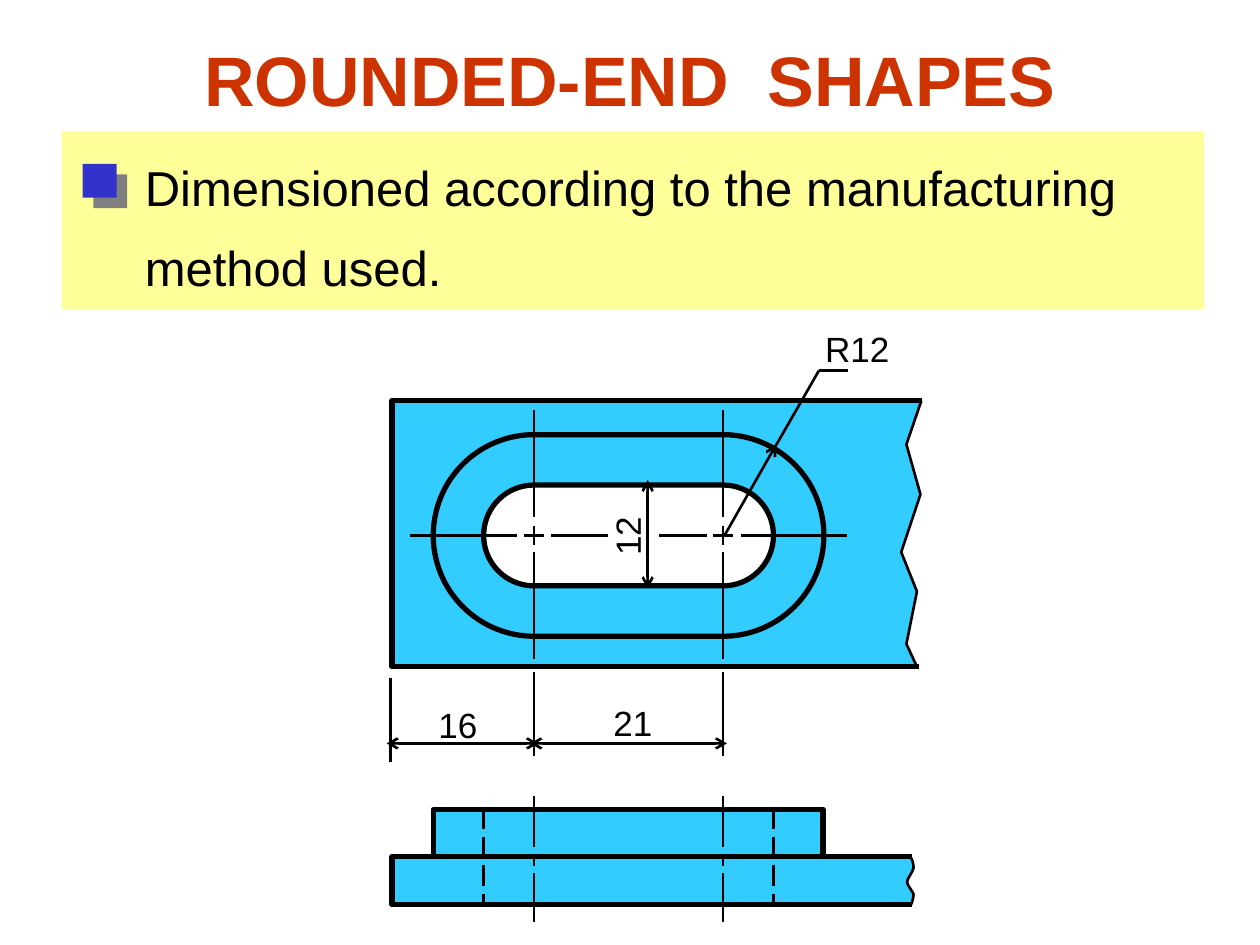
from dataclasses import dataclass
from typing import Optional

import lxml.etree
import pptx
import pptx.dml.color
import pptx.enum.dml
import pptx.enum.shapes
import pptx.enum.text
import pptx.oxml.ns
import pptx.util

Pt = pptx.util.Pt
qn = pptx.oxml.ns.qn
SHAPE = pptx.enum.shapes.MSO_SHAPE
BLACK, METAL, WHITE = "000000", "33CCFF", "FFFFFF"
THICK, THIN = 3, 1.5
Point = tuple[float, float]


@dataclass
class Stroke:
    start: Point
    end: Point
    head: bool = False
    tail: bool = False
    dashed: bool = False


@dataclass
class Label:
    text: str
    left: float
    top: float
    width: float = 36.7
    rotation: float = 0


@dataclass
class Centre:
    x: float
    outward: int    # direction of the nearer end of the slot
    reach: float    # end of the centre line on the inner side


def color(hex_code: str) -> pptx.dml.color.RGBColor:
    return pptx.dml.color.RGBColor.from_string(hex_code)


def paint(shape, fill: Optional[str], weight: float = 0) -> None:
    shape.shadow.inherit = False
    if fill:
        shape.fill.solid()
        shape.fill.fore_color.rgb = color(fill)
    else:
        shape.fill.background()
    if weight:
        shape.line.color.rgb = color(BLACK)
        shape.line.width = Pt(weight)
    else:
        shape.line.fill.background()


def add_block(kind, left: float, top: float, width: float, height: float,
              fill: str, weight: float = 0):
    block = shapes.add_shape(kind, Pt(left), Pt(top), Pt(width), Pt(height))
    paint(block, fill, weight)
    return block


def add_outline(points: list[Point], fill: Optional[str], weight: float = 0) -> None:
    corners = [(Pt(x), Pt(y)) for x, y in points]
    builder = shapes.build_freeform(*corners[0])
    builder.add_line_segments(corners[1:], close=bool(fill))
    paint(builder.convert_to_shape(), fill, weight)


def add_stroke(stroke: Stroke) -> None:
    line = shapes.add_connector(pptx.enum.shapes.MSO_CONNECTOR.STRAIGHT,
                                *map(Pt, stroke.start + stroke.end))
    line.line.color.rgb = color(BLACK)
    line.line.width = Pt(THIN)
    if stroke.dashed:
        line.line.dash_style = pptx.enum.dml.MSO_LINE.LONG_DASH
    properties = line.element.spPr
    for tag, wanted in (("a:headEnd", stroke.head), ("a:tailEnd", stroke.tail)):
        if wanted:
            lxml.etree.SubElement(properties.find(qn("a:ln")), qn(tag), type="arrow")
    lxml.etree.SubElement(properties, qn("a:effectLst"))


def format_text(frame, size: float, hex_code: str, bold: bool = False) -> None:
    for paragraph in frame.paragraphs:
        for run in paragraph.runs:
            run.font.name = "Arial"
            run.font.size = Pt(size)
            run.font.bold = bold
            run.font.color.rgb = color(hex_code)


def add_label(label: Label) -> None:
    box = shapes.add_textbox(Pt(label.left), Pt(label.top), Pt(label.width), Pt(31))
    box.rotation = label.rotation
    box.text_frame.text = label.text
    format_text(box.text_frame, 20, BLACK)


def place(holder, left: float, top: float, width: float, height: float) -> None:
    holder.left, holder.top = Pt(left), Pt(top)
    holder.width, holder.height = Pt(width), Pt(height)
    holder.text_frame.auto_size = pptx.enum.text.MSO_AUTO_SIZE.NONE


def sample_curve(controls: list[Point], steps: int = 8) -> list[Point]:
    """Points along joined cubic Bezier curves."""
    points = [controls[0]]
    for first in range(0, len(controls) - 1, 3):
        a, b, c, d = controls[first:first + 4]
        for step in range(1, steps + 1):
            t = step / steps
            u = 1 - t
            points.append(tuple(u**3 * a[i] + 3 * u * u * t * b[i]
                                + 3 * u * t * t * c[i] + t**3 * d[i] for i in (0, 1)))
    return points


deck = pptx.Presentation()
deck.slide_width, deck.slide_height = Pt(720), Pt(540)
slide = deck.slides.add_slide(deck.slide_layouts[1])
shapes = slide.shapes

# Title
title = shapes.title
place(title, 54, 0, 612, 90)
title.text_frame.text = "ROUNDED-END  SHAPES"
title.text_frame.vertical_anchor = pptx.enum.text.MSO_ANCHOR.MIDDLE
title.text_frame.paragraphs[0].alignment = pptx.enum.text.PP_ALIGN.CENTER
format_text(title.text_frame, 40, "CC3300", bold=True)

# Statement on its yellow panel
panel = add_block(SHAPE.RECTANGLE, 35.3, 75, 653, 101.5, "FFFF99")
statement = slide.placeholders[1]
panel.element.addnext(statement.element)
place(statement, 75.6, 76.3, 584.6, 90.7)
statement.text_frame.text = "Dimensioned according to the manufacturing\nmethod used."
format_text(statement.text_frame, 28, BLACK)
for paragraph in statement.text_frame.paragraphs:
    paragraph.line_spacing = 1.3
    paragraph.space_before = Pt(2)
    settings = paragraph._p.get_or_add_pPr()
    settings.set("marL", "0")
    settings.set("indent", "0")
    lxml.etree.SubElement(settings, qn("a:buNone"))

# Square marker with a hard shadow
marker = add_block(SHAPE.RECTANGLE, 47.3, 93.6, 19.4, 19.4, "3333CC")
effects = marker.element.spPr.find(qn("a:effectLst"))
cast = lxml.etree.SubElement(effects, qn("a:outerShdw"), blurRad="0",
                             dist=str(Pt(8.5)), dir="2700000", algn="ctr")
lxml.etree.SubElement(cast, qn("a:srgbClr"), val="808080")

# Top view: plate, boss and slot
LEFT, TOP, BOTTOM, AXIS = 224, 229, 381, 306
SPAN = 108
CENTRES = [Centre(305.2, -1, 42.5), Centre(305.2 + SPAN, 1, 36.7)]
broken_edge = [(526.5, TOP), (518, 254), (526, 282.5), (515, 315.5),
               (524, 338), (518, 368), (524, BOTTOM)]
add_outline([(LEFT, BOTTOM), (LEFT, TOP)] + broken_edge, METAL)
for radius, fill in ((57.6, METAL), (28.8, WHITE)):
    stadium = add_block(SHAPE.ROUNDED_RECTANGLE, CENTRES[0].x - radius, AXIS - radius,
                        SPAN + 2 * radius, 2 * radius, fill, THICK)
    stadium.adjustments[0] = 0.5
add_outline([(525, BOTTOM), (LEFT, BOTTOM), (LEFT, TOP), (527, TOP)], None, THICK)
add_outline(broken_edge, None, THIN)

# Side view: base and boss
BASE_TOP, BASE_BOTTOM = 489.5, 517
wave = sample_curve([(520, BASE_TOP), (521.5, 491), (522, 494), (522, 496),
                     (521.3, 499), (518.4, 502), (518.4, 504),
                     (518.4, 506), (521.3, 509), (522, 511),
                     (522, 513), (521.3, 515.5), (520.6, BASE_BOTTOM)])
add_outline([(LEFT, BASE_BOTTOM), (LEFT, BASE_TOP)] + wave, METAL)
add_block(SHAPE.RECTANGLE, 247.6, 462.5, 222.8, 27, METAL, THICK)
add_outline([(521, BASE_BOTTOM), (LEFT, BASE_BOTTOM),
             (LEFT, BASE_TOP), (521, BASE_TOP)], None, THICK)
add_outline(wave, None, THIN)

# Centre lines, extension lines and hidden slot edges
strokes = []
for centre in CENTRES:
    x, out = centre.x, centre.outward
    for near, far in ((10, 71), (-5.5, 5.5), (-9.4, -centre.reach)):
        strokes.append(Stroke((x + out * near, AXIS), (x + out * far, AXIS)))
    for start, end in ((234, 295.2), (300.5, 311.5), (315.4, 376.5),
                       (384, 432), (455, 484), (488, 495), (499, 527)):
        strokes.append(Stroke((x, start), (x, end)))
    edge = x + out * 28.8
    strokes.append(Stroke((edge, 461.5), (edge, 517.5), dashed=True))

# Dimension lines and the radius leader
strokes += [
    Stroke((223.2, 387.4), (223.2, 435.6)),
    Stroke((221, 424.8), (307.4, 424.8), head=True, tail=True),
    Stroke((303.1, 424.8), (415.4, 424.8), head=True, tail=True),
    Stroke((370.1, 336.2), (370.1, 274.3), head=True, tail=True),
    Stroke((414, AXIS), (443.5, 254.2), tail=True),
    Stroke((442.8, 255.6), (468, 211.7)),
    Stroke((468, 211.7), (484.6, 211.7)),
]
for stroke in strokes:
    add_stroke(stroke)

# Dimension values
for label in (Label("R12", 464.4, 183.6, 51.1), Label("21", 343.4, 397.4),
              Label("12", 339.8, 290.9, rotation=270), Label("16", 243.4, 398.2)):
    add_label(label)

deck.save("out.pptx")
